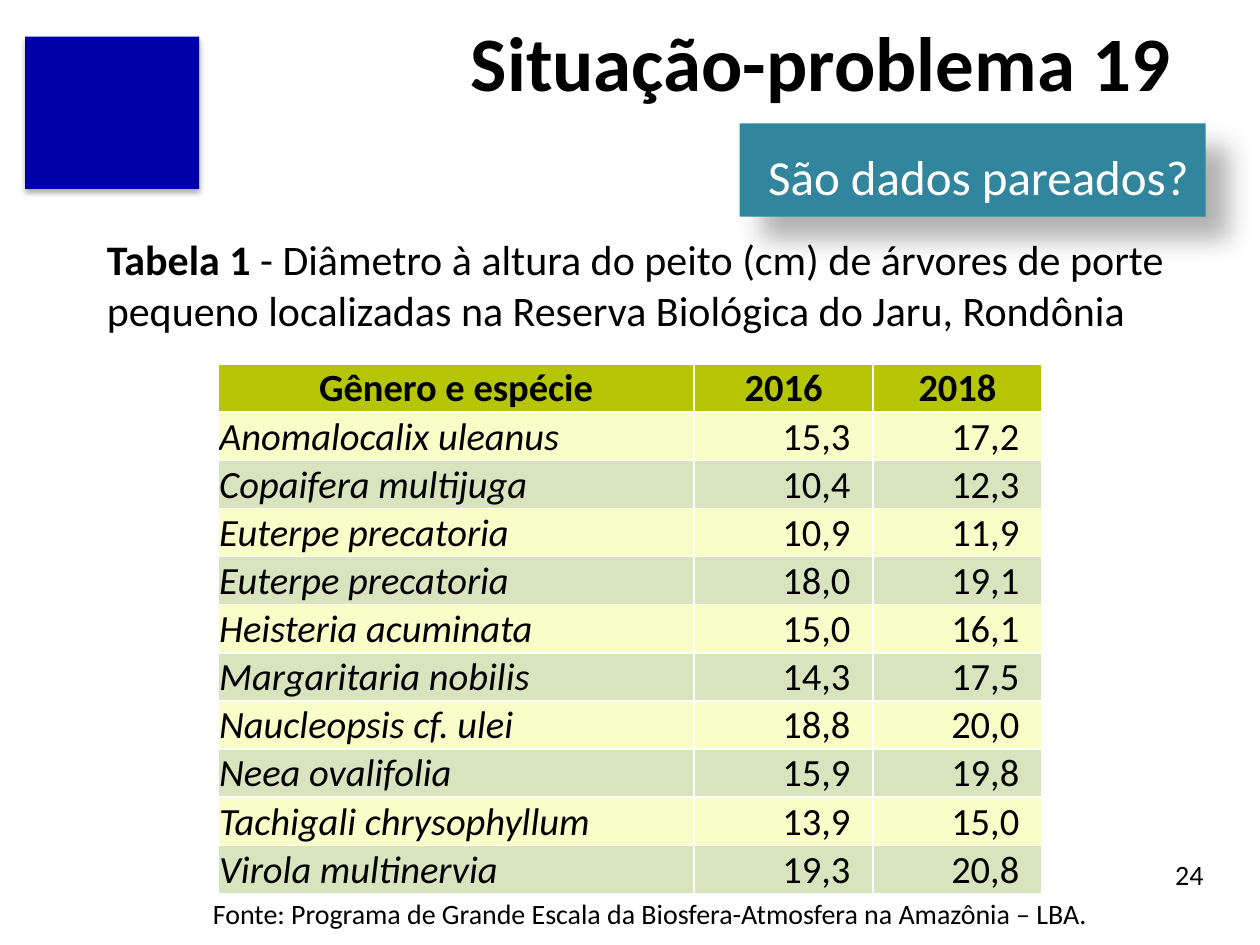
from dataclasses import dataclass

from lxml import etree
from pptx import Presentation
from pptx import util as u
from pptx.dml.color import RGBColor
from pptx.enum import shapes, text
from pptx.oxml import ns

WIDE, HIGH = u.Inches(10), u.Inches(7.5)
FONT = "Calibri"
BLACK = RGBColor(0x00, 0x00, 0x00)
WHITE = RGBColor(0xFF, 0xFF, 0xFF)
NAVY = RGBColor(0x00, 0x00, 0xA8)
TEAL = RGBColor(0x31, 0x85, 0x9C)
LIME = RGBColor(0xB7, 0xC5, 0x07)
CREAM = RGBColor(0xF9, 0xFD, 0xC7)
SAGE = RGBColor(0xD7, 0xE4, 0xBD)
LEFT, MID, RIGHT = text.PP_ALIGN.LEFT, text.PP_ALIGN.CENTER, text.PP_ALIGN.RIGHT
TOP, CENTER, BASE = (text.MSO_ANCHOR.TOP, text.MSO_ANCHOR.MIDDLE,
                     text.MSO_ANCHOR.BOTTOM)


@dataclass(frozen=True)
class Box:
    """A frame in percent of the slide's width and height."""
    x: float
    y: float
    w: float
    h: float

    def place(self) -> tuple:
        return (u.Emu(int(WIDE * self.x / 100)), u.Emu(int(HIGH * self.y / 100)),
                u.Emu(int(WIDE * self.w / 100)), u.Emu(int(HIGH * self.h / 100)))


@dataclass(frozen=True)
class Run:
    words: str
    size: float
    bold: bool = False
    slant: bool = False
    color: RGBColor = BLACK


@dataclass(frozen=True)
class Shade:
    alpha: int
    blur: float
    dist: float
    angle: int


@dataclass(frozen=True)
class Tree:
    name: str
    old: str
    new: str


TREES = [
    Tree("Anomalocalix uleanus", "15,3", "17,2"),
    Tree("Copaifera multijuga", "10,4", "12,3"),
    Tree("Euterpe precatoria", "10,9", "11,9"),
    Tree("Euterpe precatoria", "18,0", "19,1"),
    Tree("Heisteria acuminata", "15,0", "16,1"),
    Tree("Margaritaria nobilis", "14,3", "17,5"),
    Tree("Naucleopsis cf. ulei", "18,8", "20,0"),
    Tree("Neea ovalifolia", "15,9", "19,8"),
    Tree("Tachigali chrysophyllum", "13,9", "15,0"),
    Tree("Virola multinervia", "19,3", "20,8"),
]


def write(frame, runs: list[Run], align=LEFT, anchor=CENTER, lead: float = 1.0) -> None:
    frame.word_wrap = True
    frame.auto_size = text.MSO_AUTO_SIZE.NONE
    frame.vertical_anchor = anchor
    para = frame.paragraphs[0]
    para.alignment, para.line_spacing = align, lead
    for item in runs:
        run = para.add_run()
        run.text = item.words
        font = run.font
        font.name, font.size = FONT, u.Pt(item.size)
        font.bold, font.italic = item.bold, item.slant
        font.color.rgb = item.color


def label(slide, box: Box, runs: list[Run], **look):
    frame = slide.shapes.add_textbox(*box.place()).text_frame
    write(frame, runs, **look)
    return frame


def block(slide, box: Box, fill: RGBColor, shade: Shade):
    """Draw a plain filled rectangle with an outer shadow."""
    shape = slide.shapes.add_shape(shapes.MSO_SHAPE.RECTANGLE, *box.place())
    shape.fill.solid()
    shape.fill.fore_color.rgb = fill
    shape.line.fill.background()
    shape.shadow.inherit = False
    effects = shape._element.spPr.find(ns.qn("a:effectLst"))
    outer = etree.SubElement(
        effects, ns.qn("a:outerShdw"), blurRad=str(u.Pt(shade.blur)),
        dist=str(u.Pt(shade.dist)), dir=str(shade.angle * 60000),
        algn="tl", rotWithShape="0")
    tint = etree.SubElement(outer, ns.qn("a:srgbClr"), val=str(BLACK))
    etree.SubElement(tint, ns.qn("a:alpha"), val=str(shade.alpha * 1000))
    return shape


def edge(cell) -> None:
    """Give a cell thin white borders on all sides."""
    props = cell._tc.get_or_add_tcPr()
    for side in ("lnL", "lnR", "lnT", "lnB"):
        line = etree.SubElement(props, ns.qn(f"a:{side}"), w=str(u.Pt(1)))
        solid = etree.SubElement(line, ns.qn("a:solidFill"))
        etree.SubElement(solid, ns.qn("a:srgbClr"), val=str(WHITE))


def fill_cell(cell, run: Run, fill: RGBColor, align, anchor, pad: float) -> None:
    edge(cell)
    cell.fill.solid()
    cell.fill.fore_color.rgb = fill
    cell.margin_left = cell.margin_top = u.Inches(0.01)
    cell.margin_right, cell.margin_bottom = u.Inches(pad), 0
    cell.vertical_anchor = anchor
    write(cell.text_frame, [run], align, anchor)


def draw_table(slide, box: Box, shares: list[float]) -> None:
    grid = slide.shapes.add_table(len(TREES) + 1, len(shares), *box.place()).table
    grid.horz_banding = False
    for col, share in zip(grid.columns, shares):
        col.width = u.Emu(int(WIDE * share / 100))
    for c, head in enumerate(("Gênero e espécie", "2016", "2018")):
        fill_cell(grid.cell(0, c), Run(head, 22, bold=True), LIME, MID, BASE, 0.01)
    for r, tree in enumerate(TREES, 1):
        fill = CREAM if r % 2 else SAGE
        fill_cell(grid.cell(r, 0), Run(tree.name, 22, slant=True), fill, LEFT, BASE, 0.01)
        for c, value in enumerate((tree.old, tree.new), 1):
            fill_cell(grid.cell(r, c), Run(value, 22), fill, RIGHT, CENTER, 0.18)


def main() -> None:
    deck = Presentation()
    deck.slide_width, deck.slide_height = WIDE, HIGH
    slide = deck.slides.add_slide(deck.slide_layouts[5])

    # Title
    title = slide.shapes.title
    title.left, title.top, title.width, title.height = Box(20.1, -0.27, 73.9, 13.33).place()
    write(title.text_frame, [Run("Situação-problema 19", 44, bold=True)], RIGHT)

    # Page number and emblem
    label(slide, Box(73.2, 89.87, 23.3, 5.33), [Run("24", 16)], align=RIGHT)
    block(slide, Box(2, 3.87, 13.8, 16.13), NAVY, Shade(32, 3.5, 2.2, 90))

    # Question banner
    banner = block(slide, Box(58.7, 13.07, 37, 9.87), TEAL, Shade(30, 15, 18, 45))
    frame = banner.text_frame
    frame.margin_left, frame.margin_right = u.Inches(0.15), u.Inches(0.06)
    write(frame, [Run("São dados pareados?", 28, color=WHITE)], MID, lead=1.2)

    # Table with its caption and source
    draw_table(slide, Box(17.3, 38.53, 65.4, 54.8), [37.8, 14.2, 13.4])
    label(slide, Box(7.5, 19.6, 90.6, 20.93), [
        Run("Tabela 1", 24, bold=True),
        Run(" - Diâmetro à altura do peito (cm) de árvores de porte pequeno "
            "localizadas na Reserva Biológica do Jaru, Rondônia", 24)])
    source = label(slide, Box(15.4, 93.47, 84.6, 6.53), [
        Run("Fonte: Programa de Grande Escala da Biosfera-Atmosfera "
            "na Amazônia – LBA.", 16)], anchor=TOP, lead=1.2)
    source.margin_left = u.Inches(0.15)

    deck.save("out.pptx")


if __name__ == "__main__":
    main()
